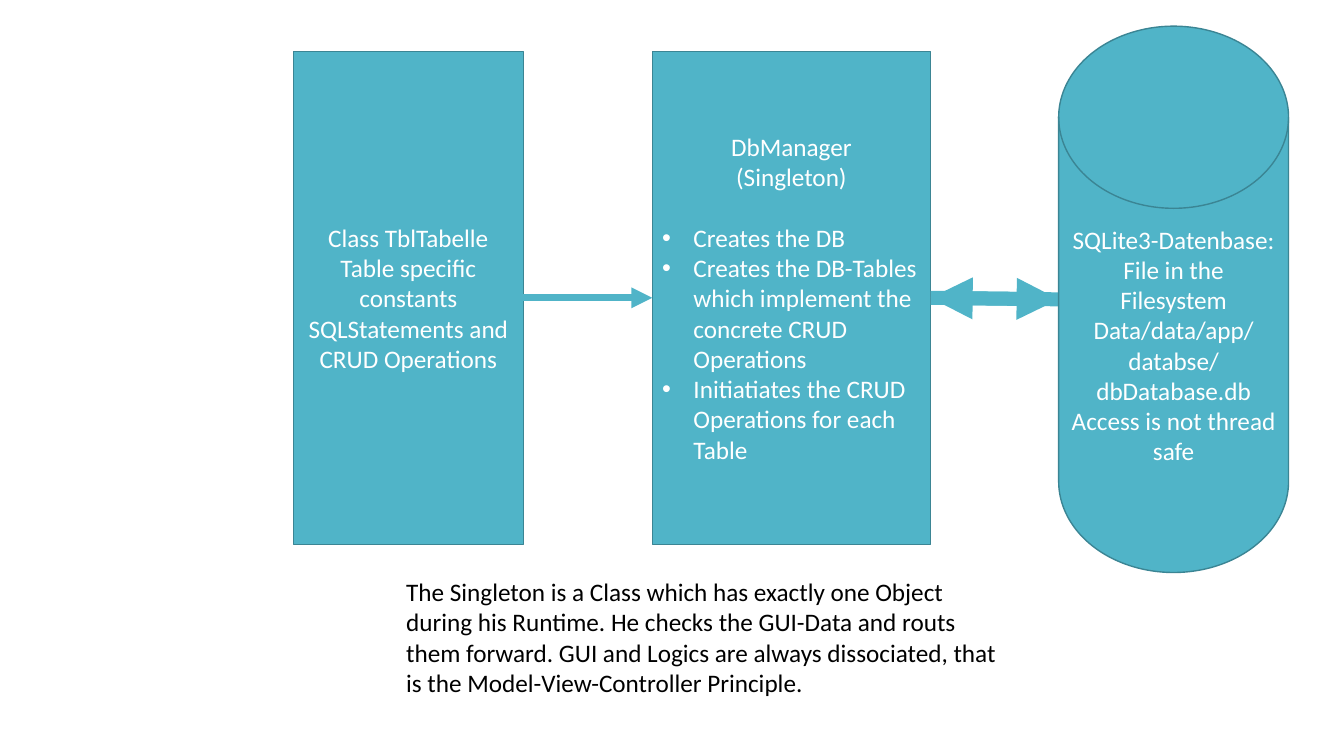
from lxml.etree import SubElement
from pptx import Presentation
from pptx.dml.color import RGBColor
from pptx.enum.shapes import MSO_CONNECTOR, MSO_SHAPE
from pptx.enum.text import MSO_ANCHOR, PP_ALIGN
from pptx.oxml.ns import qn
from pptx.util import Inches, Pt

TEAL = "50B4C8"
DARK_TEAL = "3B8594"
WHITE = "FFFFFF"
BLACK = "000000"
FONT_FORMAT = {"name": "Calibri", "size": Pt(18)}
BOX_TOP, BOX_HEIGHT = 0.51, 4.89
TABLE_LEFT, MANAGER_LEFT, DATABASE_LEFT = 2.91, 6.47, 10.5
NARROW, WIDE = 2.28, 2.76
MIDDLE = BOX_TOP + BOX_HEIGHT / 2

TABLE_TEXT = ["Class TblTabelle\nTable specific constants SQLStatements and CRUD Operations"]
MANAGER_TITLE = ["DbManager\n(Singleton)"]
MANAGER_TASKS = [
    "Creates the DB",
    "Creates the DB-Tables which implement the concrete CRUD Operations",
    "Initiatiates the CRUD Operations for each Table",
]
DATABASE_TEXT = [
    "SQLite3-Datenbase:",
    "File in the Filesystem",
    "Data/data/app/databse/dbDatabase.db",
    "Access is not thread safe",
]
CAPTION = (
    "The Singleton is a Class which has exactly one Object during his Runtime. "
    "He checks the GUI-Data and routs them forward. GUI and Logics are always "
    "dissociated, that is the Model-View-Controller Principle."
)


def color(value):
    return RGBColor.from_string(value)


def apply_format(target, values):
    for name, value in values.items():
        setattr(target, name, value)


def write_paragraph(paragraph, text, text_color, alignment):
    paragraph.text = text
    paragraph.alignment = alignment
    apply_format(paragraph.font, FONT_FORMAT)
    paragraph.font.color.rgb = color(text_color)
    for run in paragraph.runs:
        apply_format(run.font, FONT_FORMAT)
        run.font.color.rgb = color(text_color)


def add_bullet(paragraph):
    properties = paragraph._p.get_or_add_pPr()
    properties.set("marL", str(Inches(0.31)))
    properties.set("indent", str(Inches(-0.31)))
    SubElement(properties, qn("a:buFont"), typeface="Arial")
    SubElement(properties, qn("a:buChar"), char="•")


def add_block(slide, kind, left, top, width, height, lines, bullets=()):
    shape = slide.shapes.add_shape(
        kind, Inches(left), Inches(top), Inches(width), Inches(height)
    )
    shape.shadow.inherit = False
    shape.fill.solid()
    shape.fill.fore_color.rgb = color(TEAL)
    shape.line.color.rgb = color(DARK_TEAL)
    shape.line.width = Pt(1)
    frame = shape.text_frame
    apply_format(frame, {"word_wrap": True, "vertical_anchor": MSO_ANCHOR.MIDDLE})
    for index, text in enumerate([*lines, *bullets]):
        paragraph = frame.add_paragraph() if index else frame.paragraphs[0]
        is_bullet = index >= len(lines)
        alignment = PP_ALIGN.LEFT if is_bullet else PP_ALIGN.CENTER
        write_paragraph(paragraph, text, WHITE, alignment)
        if is_bullet:
            add_bullet(paragraph)
    if bullets:
        frame.paragraphs[len(lines) - 1].space_after = Pt(21.6)


def add_arrow(slide, start, end, width):
    arrow = slide.shapes.add_connector(
        MSO_CONNECTOR.STRAIGHT, *(Inches(value) for value in (*start, *end))
    )
    arrow.line.color.rgb = color(TEAL)
    arrow.line.width = Pt(width)
    SubElement(arrow.line._get_or_add_ln(), qn("a:tailEnd"), type="triangle")
    SubElement(arrow._element.spPr, qn("a:effectLst"))


def add_caption(slide, left, top, width, height, text):
    box = slide.shapes.add_textbox(
        Inches(left), Inches(top), Inches(width), Inches(height)
    )
    box.text_frame.word_wrap = True
    write_paragraph(box.text_frame.paragraphs[0], text, BLACK, PP_ALIGN.LEFT)


def main():
    presentation = Presentation()
    presentation.slide_width = Inches(13.33)
    presentation.slide_height = Inches(7.5)
    slide = presentation.slides.add_slide(presentation.slide_layouts[6])

    add_block(slide, MSO_SHAPE.RECTANGLE, MANAGER_LEFT, BOX_TOP, WIDE, BOX_HEIGHT,
              MANAGER_TITLE, MANAGER_TASKS)
    add_caption(slide, 3.93, 5.67, 6.05, 1.62, CAPTION)
    manager_side = (MANAGER_LEFT + WIDE, MIDDLE)
    database_side = (DATABASE_LEFT, 2.97)
    add_arrow(slide, database_side, manager_side, 10)
    add_arrow(slide, manager_side, database_side, 10)
    add_block(slide, MSO_SHAPE.FLOWCHART_MAGNETIC_DISK, DATABASE_LEFT, 0.26, NARROW, 5.42,
              DATABASE_TEXT)
    add_block(slide, MSO_SHAPE.RECTANGLE, TABLE_LEFT, BOX_TOP, NARROW, BOX_HEIGHT, TABLE_TEXT)
    add_arrow(slide, (TABLE_LEFT + NARROW, MIDDLE), (MANAGER_LEFT, MIDDLE), 5)

    presentation.save("out.pptx")


if __name__ == "__main__":
    main()
